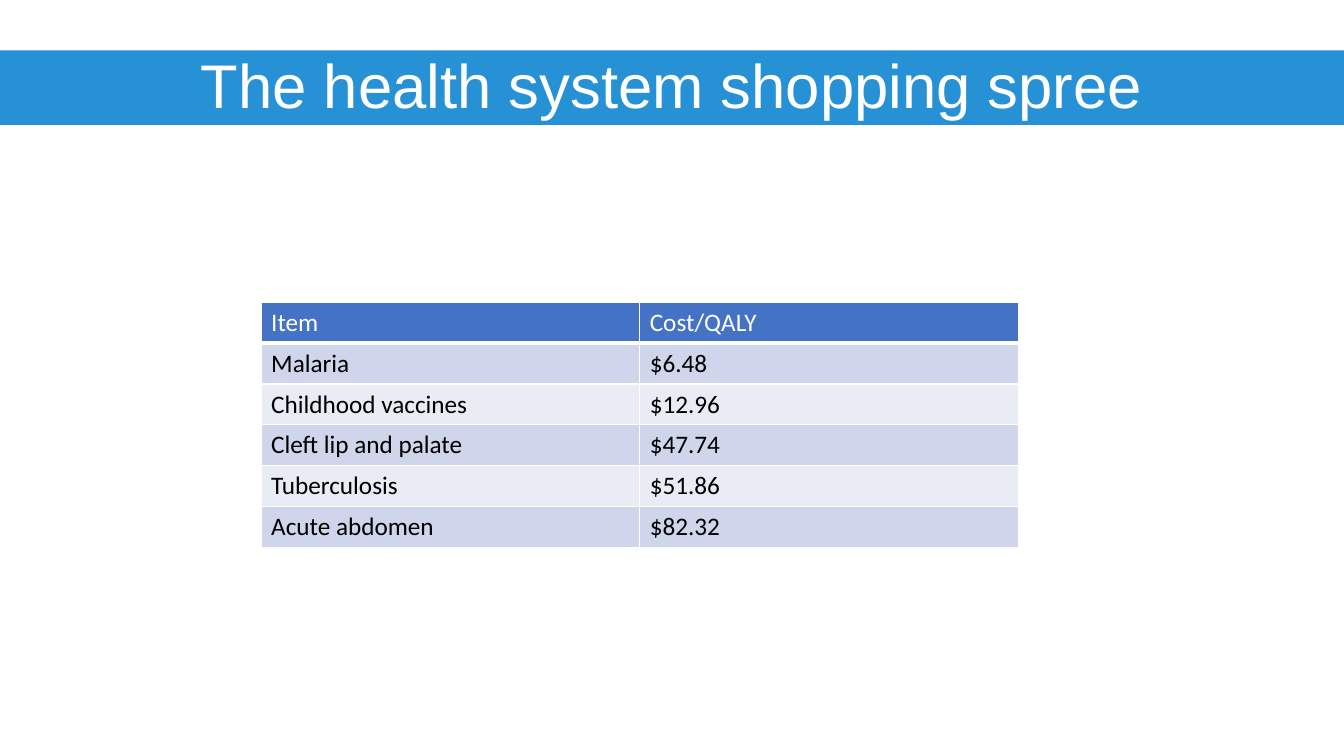
from dataclasses import dataclass

from lxml.etree import SubElement
from pptx import Presentation
from pptx.dml.color import RGBColor
from pptx.enum.shapes import MSO_SHAPE
from pptx.enum.text import MSO_ANCHOR, PP_ALIGN
from pptx.oxml.ns import qn
from pptx.util import Inches, Pt


@dataclass(frozen=True)
class Theme:
    """Colours, fonts and type sizes of the slide."""
    banner: str = "2791D5"
    header: str = "4472C4"
    bands: tuple = ("CFD5EA", "E9EBF5")
    light: str = "FFFFFF"
    dark: str = "000000"
    title_font: str = "Arial"
    body_font: str = "Calibri"
    title_size: int = 44
    body_size: int = 18
    rule_width: int = 1
    header_rule_width: int = 3


THEME = Theme()
COSTS = [
    ("Item", "Cost/QALY"),
    ("Malaria", "$6.48"),
    ("Childhood vaccines", "$12.96"),
    ("Cleft lip and palate", "$47.74"),
    ("Tuberculosis", "$51.86"),
    ("Acute abdomen", "$82.32"),
]


def write(frame, text, *, font, size, color, align=PP_ALIGN.LEFT, spacing=1.0):
    """Write one formatted paragraph into a text frame."""
    paragraph = frame.paragraphs[0]
    paragraph.text = text
    paragraph.alignment = align
    paragraph.line_spacing = spacing
    paragraph.font.name = font
    paragraph.font.size = Pt(size)
    paragraph.font.bold = False
    paragraph.font.color.rgb = RGBColor.from_string(color)


def rule_cell(cell, color, width, bottom_width):
    """Draw solid rules on the four sides of a table cell."""
    properties = cell._tc.get_or_add_tcPr()
    for side in "LRTB":
        points = bottom_width if side == "B" else width
        rule = SubElement(properties, qn(f"a:ln{side}"), w=str(Pt(points)))
        solid = SubElement(rule, qn("a:solidFill"))
        SubElement(solid, qn("a:srgbClr"), val=color)


def add_banner(slide, title, left, top, width, height):
    """Place the coloured banner with its centred title."""
    banner = slide.shapes.add_shape(
        MSO_SHAPE.RECTANGLE, Inches(left), Inches(top), Inches(width), Inches(height))
    banner.shadow.inherit = False
    banner.fill.solid()
    banner.fill.fore_color.rgb = RGBColor.from_string(THEME.banner)
    banner.line.fill.background()

    margin, overhang = 0.92, 0.1
    heading = slide.shapes.add_textbox(
        Inches(left + margin), Inches(top - overhang),
        Inches(width - 2 * margin), Inches(0.96))
    heading.text_frame.word_wrap = True
    heading.text_frame.vertical_anchor = MSO_ANCHOR.MIDDLE
    write(heading.text_frame, title, font=THEME.title_font, size=THEME.title_size,
          color=THEME.light, align=PP_ALIGN.CENTER, spacing=0.9)


def add_cost_table(slide, costs, left, top, width, height):
    """Place the banded cost table with equal rows and columns."""
    table = slide.shapes.add_table(
        len(costs), len(costs[0]),
        Inches(left), Inches(top), Inches(width), Inches(height)).table
    for row, entries in enumerate(costs):
        is_header = row == 0
        fill = THEME.header if is_header else THEME.bands[(row - 1) % 2]
        for column, entry in enumerate(entries):
            cell = table.cell(row, column)
            rule_cell(cell, THEME.light, THEME.rule_width,
                      THEME.header_rule_width if is_header else THEME.rule_width)
            cell.fill.solid()
            cell.fill.fore_color.rgb = RGBColor.from_string(fill)
            write(cell.text_frame, entry, font=THEME.body_font, size=THEME.body_size,
                  color=THEME.light if is_header else THEME.dark)


def main():
    """Build the slide and save it."""
    deck = Presentation()
    deck.slide_width, deck.slide_height = Inches(13.33), Inches(7.5)
    slide = deck.slides.add_slide(deck.slide_layouts[6])
    add_banner(slide, "The health system shopping spree", 0, 0.5, 13.33, 0.74)
    add_cost_table(slide, COSTS, 2.59, 3, 7.51, 2.43)
    deck.save("out.pptx")


if __name__ == "__main__":
    main()
